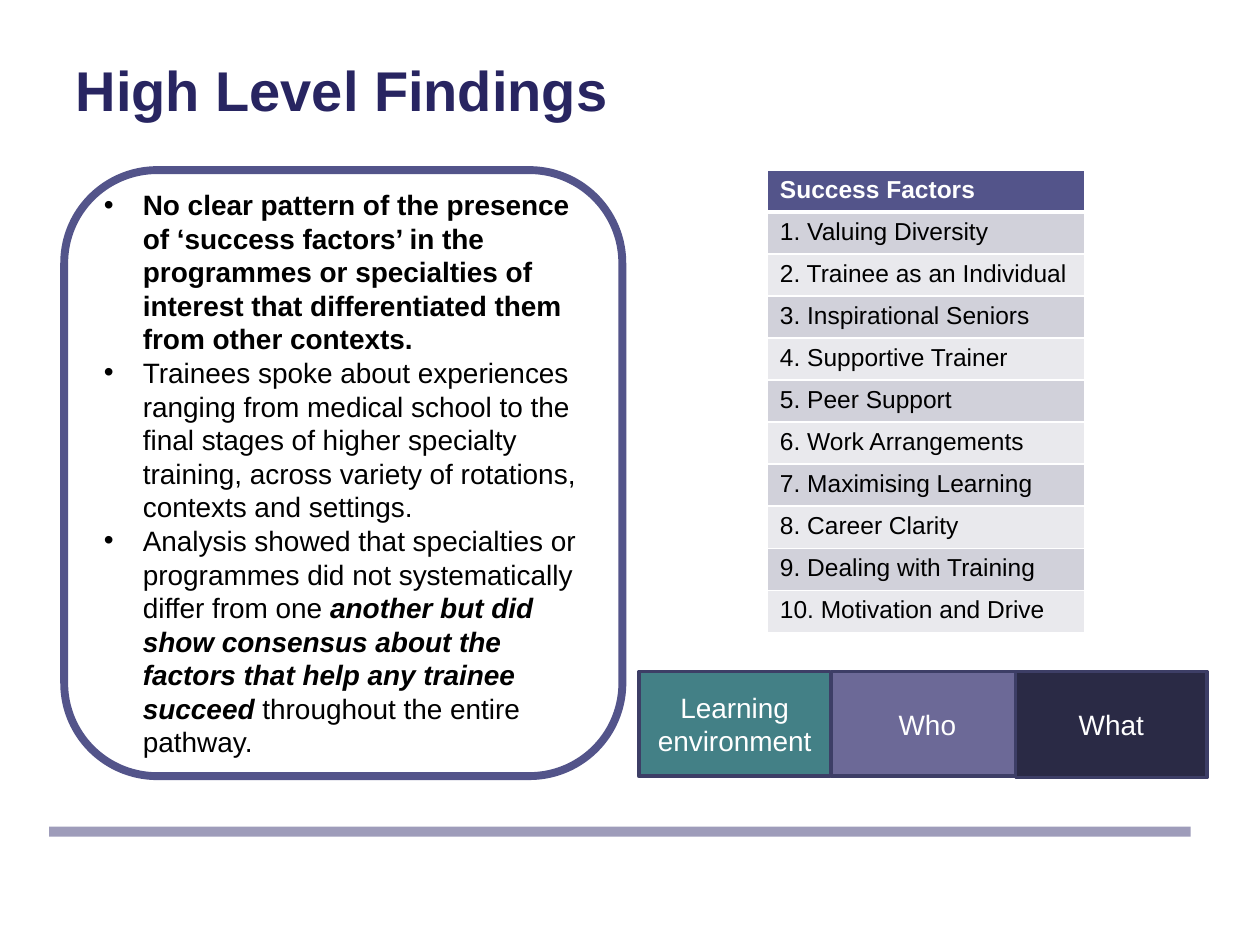
"""Build the High Level Findings slide."""
from typing import NamedTuple, Optional

from lxml import etree
from pptx import Presentation
from pptx import util as u
from pptx.dml.color import RGBColor
from pptx.enum import shapes, text
from pptx.oxml import ns

FONT = "Arial"
WIDTH, HEIGHT = u.Inches(10), u.Inches(7.5)
INDENT = u.Inches(0.31)
BLACK, WHITE, INDIGO, OUTLINE = "000000", "FFFFFF", "53548A", "3D3E66"
BANDS = ("D1D1DA", "E9E9ED")


class Area(NamedTuple):
    """A rectangle in percent of the slide's width and height."""
    left: float
    top: float
    width: float
    height: float

    def lengths(self) -> tuple[int, int, int, int]:
        return (int(WIDTH * self.left / 100), int(HEIGHT * self.top / 100),
                int(WIDTH * self.width / 100), int(HEIGHT * self.height / 100))


class Run(NamedTuple):
    words: str
    bold: bool = False
    italic: bool = False


class Theme(NamedTuple):
    label: str
    fill: str
    area: Area


FINDINGS = (
    (Run("No clear pattern of the presence of ‘success factors’ in the programmes or "
         "specialties of interest that differentiated them from other contexts.", True),),
    (Run("Trainees spoke about experiences ranging from medical school to the final stages "
         "of higher specialty training, across variety of rotations, contexts and settings."),),
    (Run("Analysis showed that specialties or programmes did not systematically differ from one "),
     Run("another but did show consensus about the factors that help any trainee succeed ", True, True),
     Run("throughout the entire pathway.")),
)
FACTORS = ("Valuing Diversity", "Trainee as an Individual", "Inspirational Seniors",
           "Supportive Trainer", "Peer Support", "Work Arrangements", "Maximising Learning",
           "Career Clarity", "Dealing with Training", "Motivation and Drive")
THEMES = (
    Theme("Learning environment", "438086", Area(50.7, 71.07, 15.2, 11.07)),
    Theme("Who", "6C6997", Area(66, 71.07, 15.2, 11.07)),
    Theme("What", "2A2A45", Area(80.6, 71.07, 15.2, 11.2)),
)


def colour(value: str) -> RGBColor:
    return RGBColor.from_string(value)


def paint(target, value: str) -> None:
    target.fill.solid()
    target.fill.fore_color.rgb = colour(value)


def add_run(paragraph, run: Run, size: float, value: str) -> None:
    added = paragraph.add_run()
    added.text = run.words
    font = added.font
    font.name, font.size = FONT, u.Pt(size)
    font.bold, font.italic = run.bold, run.italic
    font.color.rgb = colour(value)


def add_box(slide, kind, area: Area, fill: str, line: Optional[str] = None, weight: float = 0):
    shape = slide.shapes.add_shape(kind, *area.lengths())
    shape.shadow.inherit = False
    paint(shape, fill)
    if line:
        shape.line.color.rgb = colour(line)
        shape.line.width = u.Pt(weight)
    else:
        shape.line.fill.background()
    shape.text_frame.word_wrap = True
    shape.text_frame.vertical_anchor = text.MSO_ANCHOR.MIDDLE
    return shape


def add_title(slide, words: str, area: Area) -> None:
    title = slide.shapes.title
    title.left, title.top, title.width, title.height = area.lengths()
    title.text_frame.vertical_anchor = text.MSO_ANCHOR.MIDDLE
    paragraph = title.text_frame.paragraphs[0]
    paragraph.alignment = text.PP_ALIGN.LEFT
    add_run(paragraph, Run(words, True), 32, "282561")


def add_bullet(paragraph) -> None:
    properties = paragraph._p.get_or_add_pPr()
    properties.set("marL", str(INDENT))
    properties.set("indent", str(-INDENT))
    etree.SubElement(properties, ns.qn("a:buFont"), typeface=FONT)
    etree.SubElement(properties, ns.qn("a:buChar"), char="•")


def add_findings(slide, area: Area) -> None:
    shape = add_box(slide, shapes.MSO_SHAPE.ROUNDED_RECTANGLE, area, WHITE, INDIGO, 4.5)
    frame = shape.text_frame
    for index, runs in enumerate(FINDINGS):
        paragraph = frame.add_paragraph() if index else frame.paragraphs[0]
        paragraph.alignment = text.PP_ALIGN.LEFT
        add_bullet(paragraph)
        for run in runs:
            add_run(paragraph, run, 16, BLACK)


def add_borders(cell, bottom: float) -> None:
    properties = cell._tc.get_or_add_tcPr()
    for index, (side, weight) in enumerate((("L", 1), ("R", 1), ("T", 1), ("B", bottom))):
        line = etree.Element(ns.qn(f"a:ln{side}"), w=str(u.Pt(weight)))
        fill = etree.SubElement(line, ns.qn("a:solidFill"))
        etree.SubElement(fill, ns.qn("a:srgbClr"), val=WHITE)
        properties.insert(index, line)


def add_factors(slide, area: Area) -> None:
    labels = ["Success Factors"] + [f"{n}. {name}" for n, name in enumerate(FACTORS, 1)]
    table = slide.shapes.add_table(len(labels), 1, *area.lengths()).table
    for index, label in enumerate(labels):
        header = index == 0
        cell = table.cell(index, 0)
        paint(cell, INDIGO if header else BANDS[(index - 1) % 2])
        add_borders(cell, 3 if header else 1)
        add_run(cell.text_frame.paragraphs[0], Run(label, header), 14, WHITE if header else BLACK)


def add_theme(slide, theme: Theme) -> None:
    shape = add_box(slide, shapes.MSO_SHAPE.RECTANGLE, theme.area, theme.fill, OUTLINE, 2)
    paragraph = shape.text_frame.paragraphs[0]
    paragraph.alignment = text.PP_ALIGN.CENTER
    add_run(paragraph, Run(theme.label), 16, WHITE)


def main() -> None:
    presentation = Presentation()
    presentation.slide_width, presentation.slide_height = WIDTH, HEIGHT
    slide = presentation.slides.add_slide(presentation.slide_layouts.get_by_name("Title Only"))
    add_box(slide, shapes.MSO_SHAPE.RECTANGLE, Area(3.9, 87.47, 90.6, 1.07), "9E9CBA")
    add_title(slide, "High Level Findings", Area(5, 1.07, 90, 16.67))
    add_findings(slide, Area(5.1, 18, 44.3, 64.13))
    add_factors(slide, Area(60.9, 18, 25.2, 48.93))
    for theme in THEMES:
        add_theme(slide, theme)
    presentation.save("out.pptx")


if __name__ == "__main__":
    main()
